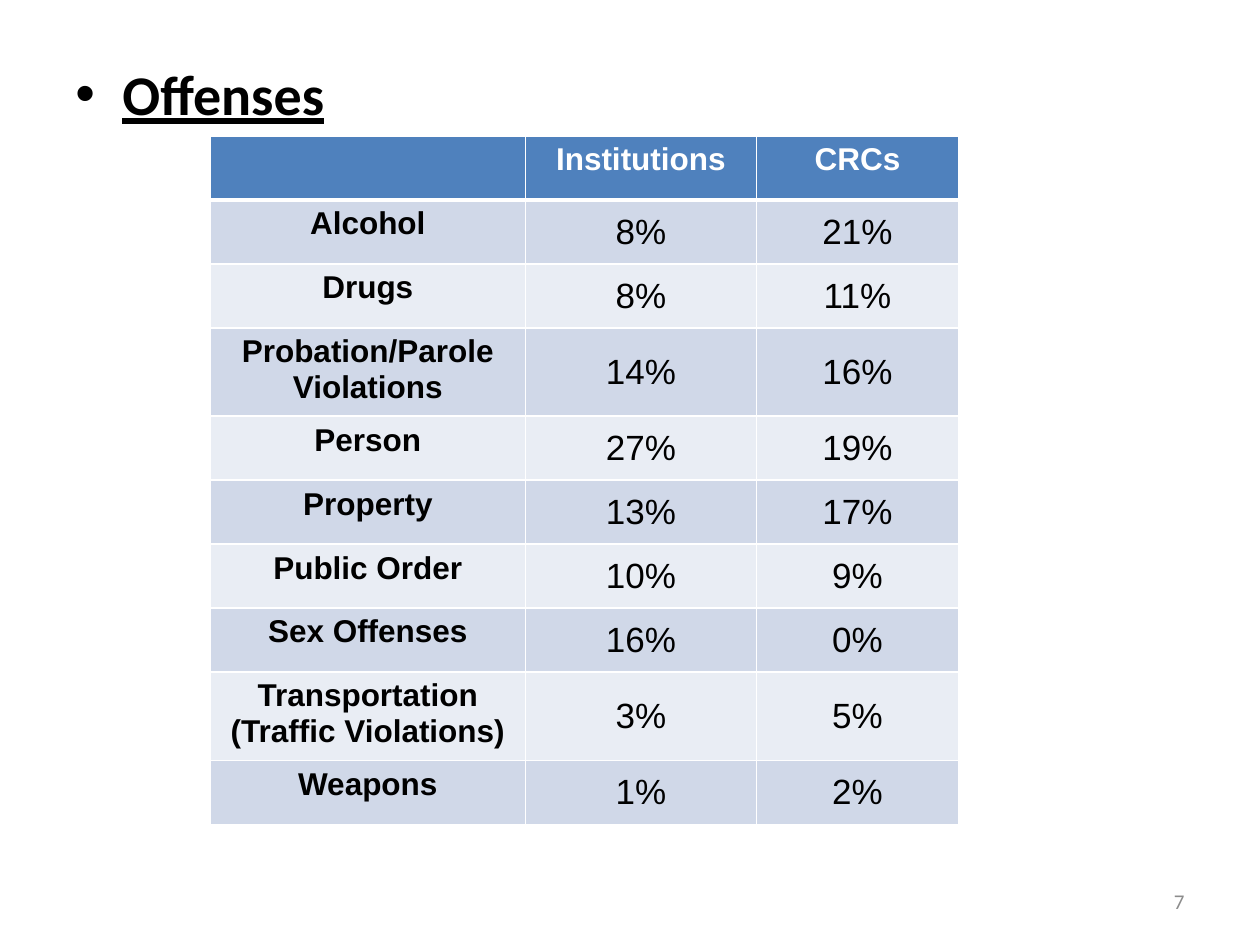
from lxml.etree import SubElement
from pptx import Presentation
from pptx.dml.color import RGBColor
from pptx.enum.text import MSO_ANCHOR, PP_ALIGN
from pptx.oxml.ns import qn
from pptx.util import Cm, Pt

HEADER = ("", "Institutions", "CRCs")
OFFENSES = [
    ("Alcohol", "8%", "21%"),
    ("Drugs", "8%", "11%"),
    ("Probation/Parole Violations", "14%", "16%"),
    ("Person", "27%", "19%"),
    ("Property", "13%", "17%"),
    ("Public Order", "10%", "9%"),
    ("Sex Offenses", "16%", "0%"),
    ("Transportation (Traffic Violations)", "3%", "5%"),
    ("Weapons", "1%", "2%"),
]


def color(hex_string):
    return RGBColor.from_string(hex_string)


class SlideBuilder:
    """Holds the style and the current slide."""

    heading_font, table_font = "Calibri", "Arial"
    black, white, gray = "000000", "FFFFFF", "8C8C8C"
    header_fill, band_fills = "4F81BD", ("D0D8E8", "E9EDF4")

    def __init__(self, slide):
        self.slide = slide

    def format_text(self, paragraph, font, size, hex_string, bold=False):
        for run in paragraph.runs:
            run.font.name = font
            run.font.size = Pt(size)
            run.font.bold = bold
            run.font.color.rgb = color(hex_string)

    def text(self, text, left, top, width, height, size, hex_string, bold=False):
        shape = self.slide.shapes.add_textbox(Cm(left), Cm(top), Cm(width), Cm(height))
        shape.text_frame.word_wrap = True
        shape.text_frame.text = text
        paragraph = shape.text_frame.paragraphs[0]
        self.format_text(paragraph, self.heading_font, size, hex_string, bold)
        return shape.text_frame

    def bullet_heading(self, text, left, top, width, height):
        frame = self.text(text, left, top, width, height, 32, self.black, True)
        paragraph = frame.paragraphs[0]
        paragraph.runs[0].font.underline = True
        properties = paragraph._p.get_or_add_pPr()
        indent = Cm(0.95)
        properties.set("marL", str(indent))
        properties.set("indent", str(-indent))
        SubElement(properties, qn("a:buFont"), typeface="Arial")
        SubElement(properties, qn("a:buChar"), char="•")

    def page_number(self, text, left, top, width, height):
        frame = self.text(text, left, top, width, height, 12, self.gray)
        frame.vertical_anchor = MSO_ANCHOR.MIDDLE
        frame.paragraphs[0].alignment = PP_ALIGN.RIGHT

    def borders(self, cell, top, bottom):
        properties = cell._tc.get_or_add_tcPr()
        for side, width in (("L", 1), ("R", 1), ("T", top), ("B", bottom)):
            line = SubElement(properties, qn("a:ln" + side), w=str(Pt(width)))
            fill = SubElement(line, qn("a:solidFill"))
            SubElement(fill, qn("a:srgbClr"), val=self.white)

    def cell(self, cell, text, row, column):
        is_header, is_value = row == 0, row > 0 and column > 0
        self.borders(cell, 3 if row == 1 else 1, 3 if is_header else 1)
        cell.fill.solid()
        fill = self.header_fill if is_header else self.band_fills[(row - 1) % 2]
        cell.fill.fore_color.rgb = color(fill)
        cell.vertical_anchor = MSO_ANCHOR.MIDDLE if is_value else MSO_ANCHOR.TOP
        cell.text_frame.text = text
        paragraph = cell.text_frame.paragraphs[0]
        paragraph.alignment = PP_ALIGN.CENTER
        self.format_text(paragraph, self.table_font, 20 if is_value else 18,
                         self.white if is_header else self.black, not is_value)

    def table(self, rows, left, top, column_widths, row_height):
        table = self.slide.shapes.add_table(
            len(rows), len(column_widths), Cm(left), Cm(top),
            Cm(sum(column_widths)), Cm(row_height * len(rows))).table
        for column, width in zip(table.columns, column_widths):
            column.width = Cm(width)
        for row, values in enumerate(rows):
            table.rows[row].height = Cm(row_height)
            for column, value in enumerate(values):
                self.cell(table.cell(row, column), value, row, column)


def main():
    presentation = Presentation()
    presentation.slide_width, presentation.slide_height = Cm(25.4), Cm(19.05)
    slide = presentation.slides.add_slide(presentation.slide_layouts[6])
    builder = SlideBuilder(slide)

    # Heading
    builder.bullet_heading("Offenses", 1.27, 1.07, 20.75, 17.15)

    # Page number
    builder.page_number("7", 18.21, 17.65, 5.92, 1.02)

    # Offense shares by facility type
    builder.table([HEADER] + OFFENSES, 4.24, 2.74, (6.35, 4.66, 4.07), 1.29)

    presentation.save("out.pptx")


if __name__ == "__main__":
    main()
